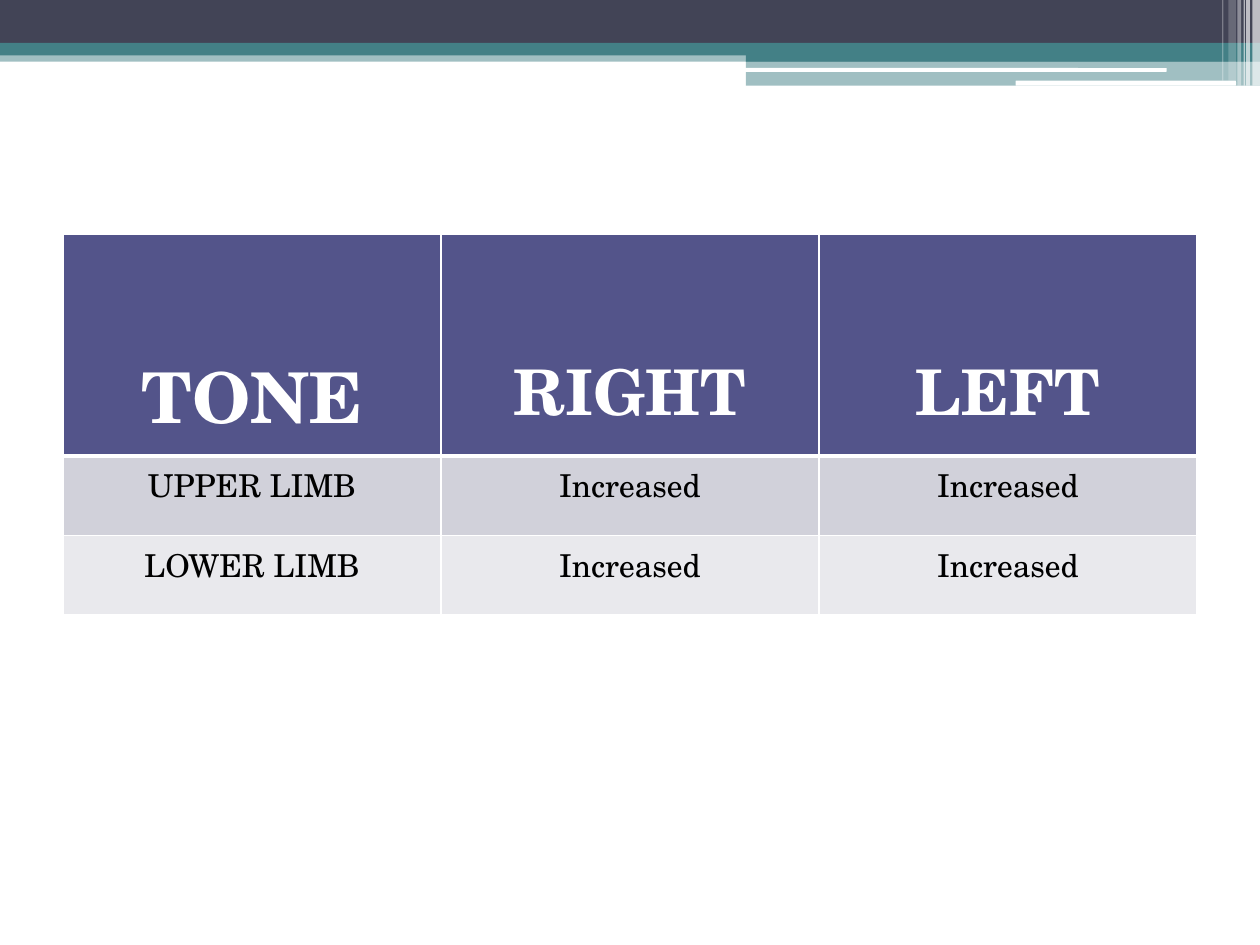
from dataclasses import dataclass

from lxml import etree
from pptx import Presentation
from pptx.dml.color import RGBColor
from pptx.enum.shapes import MSO_SHAPE
from pptx.enum.text import MSO_ANCHOR, PP_ALIGN
from pptx.oxml.ns import qn
from pptx.util import Inches, Pt

RECT = MSO_SHAPE.RECTANGLE
ROUNDED = MSO_SHAPE.ROUNDED_RECTANGLE
CENTER = PP_ALIGN.CENTER
TOP = MSO_ANCHOR.TOP
SLIDE_WIDTH, SLIDE_HEIGHT = Inches(10), Inches(7.5)
GRID_COLUMNS, GRID_ROWS = 100, 75


@dataclass(frozen=True)
class Theme:
    """Colours, font and type sizes of the slide."""
    font: str = "TeX Gyre Schola"
    white: str = "FFFFFF"
    black: str = "000000"
    slate: str = "424456"
    teal: str = "438086"
    header: str = "53548A"
    bands: tuple = ("D1D1DA", "E9E9ED")
    tone_size: int = 40
    side_size: int = 36
    body_size: int = 18
    rule: int = 1
    header_rule: int = 3


THEME = Theme()


def columns(count):
    """Return the width of a number of grid columns."""
    return round(SLIDE_WIDTH * count / GRID_COLUMNS)


def rows(count):
    """Return the height of a number of grid rows."""
    return round(SLIDE_HEIGHT * count / GRID_ROWS)


def add_bar(slide, box, color, opacity=100, kind=RECT):
    """Add a borderless bar at a box given in grid units."""
    left, top, width, height = box
    bar = slide.shapes.add_shape(kind, columns(left), rows(top), columns(width), rows(height))
    bar.shadow.inherit = False
    bar.line.fill.background()
    bar.fill.solid()
    bar.fill.fore_color.rgb = RGBColor.from_string(color)
    if opacity < 100:
        shade = bar.fill._xPr.find(".//" + qn("a:srgbClr"))
        etree.SubElement(shade, qn("a:alpha"), val=str(opacity * 1000))


def add_banner(slide, box):
    """Add the layered banner, its notches and the stripes at its right end."""
    left, top, width, height = box
    right, step = left + width, 59.2
    bars = (
        (0, 4, width, 0.9, THEME.teal, 50, RECT),
        (0, 0, width, 3.4, THEME.slate, 100, RECT),
        (0, 3.4, width, 1, THEME.teal, 100, RECT),
        (step, 3.9, width - step, 1, THEME.teal, 100, RECT),
        (step, 4.8, width - step, 2, THEME.teal, 50, RECT),
        (59.1, 5.4, 33.5, 0.3, THEME.white, 100, ROUNDED),
        (80.6, 6.4, 17.5, 0.4, THEME.white, 100, ROUNDED),
    )
    for x, y, w, h, color, opacity, kind in bars:
        add_bar(slide, (left + x, top + y, w, h), color, opacity, kind)
    stripes = (
        (0.6, 0.6, height, 65),
        (1.1, 0.3, height, 65),
        (1.3, 0.1, height, 60),
        (1.8, 0.3, height, 40),
        (2.5, 0.6, 6.4, 20),
        (3, 0.1, 6.4, 30),
    )
    for inset, w, h, opacity in stripes:
        add_bar(slide, (right - inset, top, w, h), THEME.white, opacity)


def set_borders(cell, top, bottom):
    """Draw white rules round a cell with the given top and bottom weights."""
    properties = cell._tc.get_or_add_tcPr()
    weights = {"a:lnL": THEME.rule, "a:lnR": THEME.rule, "a:lnT": top, "a:lnB": bottom}
    for side, weight in weights.items():
        line = etree.SubElement(properties, qn(side), w=str(Pt(weight)))
        fill = etree.SubElement(line, qn("a:solidFill"))
        etree.SubElement(fill, qn("a:srgbClr"), val=THEME.white)


def write_cell(cell, text, *, size, color, fill, bold=False):
    """Write centred text in a filled cell."""
    cell.fill.solid()
    cell.fill.fore_color.rgb = RGBColor.from_string(fill)
    cell.vertical_anchor = TOP
    paragraph = cell.text_frame.paragraphs[0]
    paragraph.alignment = CENTER
    run = paragraph.add_run()
    run.text = text
    run.font.name = THEME.font
    run.font.size = Pt(size)
    run.font.bold = bold
    run.font.color.rgb = RGBColor.from_string(color)


def add_tone_table(slide, box, headings, findings):
    """Add the muscle tone table with a tall header row."""
    left, top, width, height = box
    body_height = 6.3
    header_height = height - body_height * len(findings)
    table = slide.shapes.add_table(
        len(findings) + 1, len(headings),
        columns(left), rows(top), columns(width), rows(height)).table
    for column in table.columns:
        column.width = columns(width / len(headings))
    for index, row in enumerate(table.rows):
        row.height = rows(body_height if index else header_height)

    for index, heading in enumerate(headings):
        cell = table.cell(0, index)
        set_borders(cell, THEME.rule, THEME.header_rule)
        size = THEME.side_size if index else THEME.tone_size
        write_cell(cell, heading, size=size, color=THEME.white, fill=THEME.header, bold=True)
        cell.margin_top = rows(8.5)

    for number, finding in enumerate(findings):
        upper_rule = THEME.rule if number else THEME.header_rule
        for index, text in enumerate(finding):
            cell = table.cell(number + 1, index)
            set_borders(cell, upper_rule, THEME.rule)
            write_cell(cell, text, size=THEME.body_size, color=THEME.black,
                       fill=THEME.bands[number % len(THEME.bands)])


def main():
    """Build and save the slide."""
    presentation = Presentation()
    presentation.slide_width, presentation.slide_height = SLIDE_WIDTH, SLIDE_HEIGHT
    slide = presentation.slides.add_slide(presentation.slide_layouts[6])
    add_banner(slide, (0, 0, 100, 6.8))
    limbs = ("UPPER LIMB", "LOWER LIMB")
    add_tone_table(slide, (5, 18.6, 90, 29.9), ("TONE", "RIGHT", "LEFT"),
                   [(limb, "Increased", "Increased") for limb in limbs])
    presentation.save("out.pptx")


if __name__ == "__main__":
    main()
